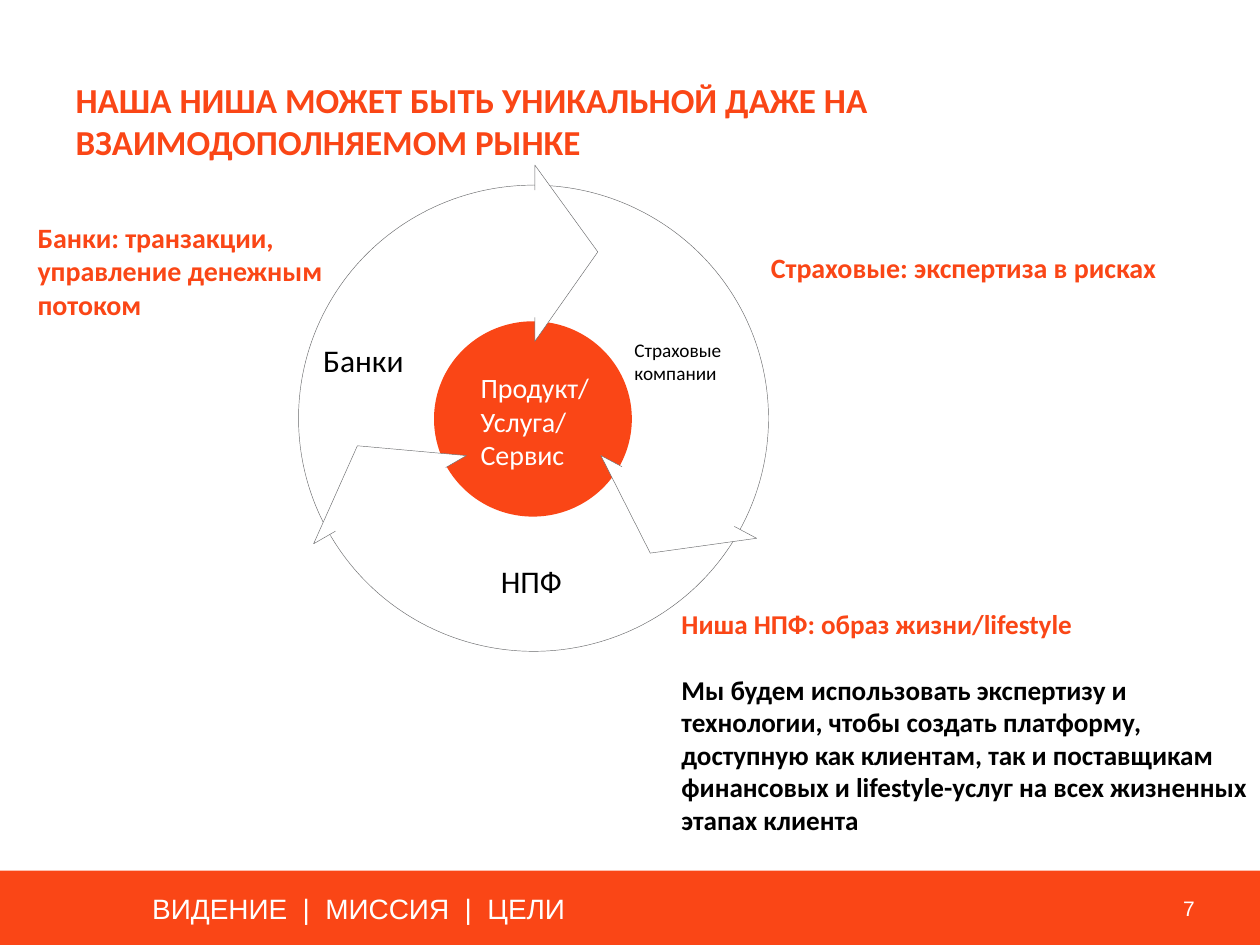
from math import cos, radians, sin

from pptx import Presentation
from pptx.dml.color import RGBColor
from pptx.enum import shapes, text
from pptx.util import Inches, Pt

HUES = {"brand": "FA4616", "white": "FFFFFF", "black": "000000", "line": "696A6C"}
KIND = shapes.MSO_SHAPE
ANCHOR = text.MSO_ANCHOR


def tint(name):
    """Return the named colour."""
    return RGBColor.from_string(HUES[name])


def paint(shape, fill, line=None):
    """Give a shape its fill and its thin outline, if any."""
    shape.shadow.inherit = False
    shape.fill.solid()
    shape.fill.fore_color.rgb = tint(fill)
    if line:
        shape.line.color.rgb = tint(line)
        shape.line.width = Pt(0.25)
    else:
        shape.line.fill.background()


def form(slide, kind, box, fill, line=None):
    """Add a painted preset shape."""
    shape = slide.shapes.add_shape(kind, *map(Inches, box))
    paint(shape, fill, line)
    return shape


def write(slide, box, rows, size, hue="black", bold=False, font="Calibri",
          pad=True, wrap=True, anchor=ANCHOR.TOP, align=text.PP_ALIGN.LEFT):
    """Add a text box with one paragraph per row and return its paragraphs."""
    frame = slide.shapes.add_textbox(*map(Inches, box)).text_frame
    frame.word_wrap = wrap
    frame.vertical_anchor = anchor
    if not pad:
        frame.margin_left = frame.margin_right = 0
        frame.margin_top = frame.margin_bottom = 0
    for num, row in enumerate(rows):
        para = frame.add_paragraph() if num else frame.paragraphs[0]
        para.alignment = align
        run = para.add_run()
        run.text = row
        run.font.name = font
        run.font.size = Pt(size)
        run.font.bold = bold
        run.font.color.rgb = tint(hue)
    return frame.paragraphs


def footer(slide, left, top, width, height):
    """Draw the bottom band with its motto and page number."""
    form(slide, KIND.RECTANGLE, (left, top, width, height), "brand")
    style = {"hue": "white", "font": "Arial", "wrap": False}
    write(slide, (left + 1.12, top + 0.12, 3.52, 0.37),
          ["ВИДЕНИЕ\u00a0 |\u00a0 МИССИЯ\u00a0 |\u00a0 ЦЕЛИ".replace("\u00a0", " ")],
          16, **style)
    write(slide, (left + width - 0.84, top + 0.15, 0.41, 0.3), ["7"], 12,
          align=text.PP_ALIGN.RIGHT, **style)


def arrow(slide, midx, midy, turn):
    """Draw an open arrowhead turned clockwise about the wheel centre."""
    head = [(0.01, -0.8), (0.01, -0.61), (0.51, -1.32), (0.01, -2.01), (0.01, -1.81)]
    c, s = cos(radians(turn)), sin(radians(turn))
    dots = [(Inches(midx + x * c - y * s), Inches(midy + x * s + y * c))
            for x, y in head]
    pen = slide.shapes.build_freeform(*dots[0])
    pen.add_line_segments(dots[1:], close=False)
    paint(pen.convert_to_shape(), "white", "line")


def wheel(slide, left, top, width, height):
    """Draw the three-part cycle around the shared product."""
    midx, midy = left + width / 2, top + height / 2
    for start in (270, 30, 150):
        part = form(slide, KIND.ARC, (left, top, width, height), "white", "line")
        part.adjustments[0] = start * 0.6
        part.adjustments[1] = (start + 120) % 360 * 0.6
    style = {"pad": False, "anchor": ANCHOR.MIDDLE}
    write(slide, (midx + 0.8, midy - 0.64, 0.87, 0.37), ["Страховые компании"],
          11, **style)
    form(slide, KIND.OVAL, (midx - 0.79, midy - 0.77, 1.57, 1.55), "brand")
    write(slide, (midx - 0.42, midy - 0.37, 1.24, 0.78),
          ["Продукт/", "Услуга/", "Сервис"], 16, "white", **style)
    for turn in (0, 240, 118):
        arrow(slide, midx, midy, turn)
    for name, dx, dy in (("Банки", -1.67, -0.61), ("НПФ", -0.26, 1.14)):
        write(slide, (midx + dx, midy + dy, 0.87, 0.3), [name], 18, **style)


def niche(slide, left, top, width, height):
    """Write the niche statement and the plan beneath it."""
    head, plan = write(slide, (left, top, width, height), [
        "Ниша НПФ: образ жизни/lifestyle",
        "Мы будем использовать экспертизу и технологии, чтобы создать платформу, "
        "доступную как клиентам, так и поставщикам финансовых и lifestyle-услуг "
        "на всех жизненных этапах клиента"], 15.5, bold=True)
    head.runs[0].font.color.rgb = tint("brand")
    plan.space_before = Pt(19)


def main():
    """Build and save the slide."""
    deck = Presentation()
    deck.slide_width, deck.slide_height = Inches(10), Inches(7.5)
    slide = deck.slides.add_slide(deck.slide_layouts[6])
    footer(slide, -0.01, 6.91, 10.02, 0.6)
    bold = {"hue": "brand", "bold": True}
    write(slide, (0.6, 0.62, 7.95, 0.67),
          ["НАША НИША МОЖЕТ БЫТЬ УНИКАЛЬНОЙ ДАЖЕ НА ВЗАИМОДОПОЛНЯЕМОМ РЫНКЕ"],
          20, pad=False, **bold)
    wheel(slide, 2.37, 1.47, 3.73, 3.7)
    niche(slide, 5.31, 4.77, 4.72, 2.13)
    write(slide, (0.2, 1.7, 3.3, 1.11),
          ["Банки: транзакции,", "управление денежным потоком"], 16, **bold)
    write(slide, (6.02, 1.94, 3.3, 0.64), ["Страховые: экспертиза в рисках"], 16, **bold)
    deck.save("out.pptx")


if __name__ == "__main__":
    main()
